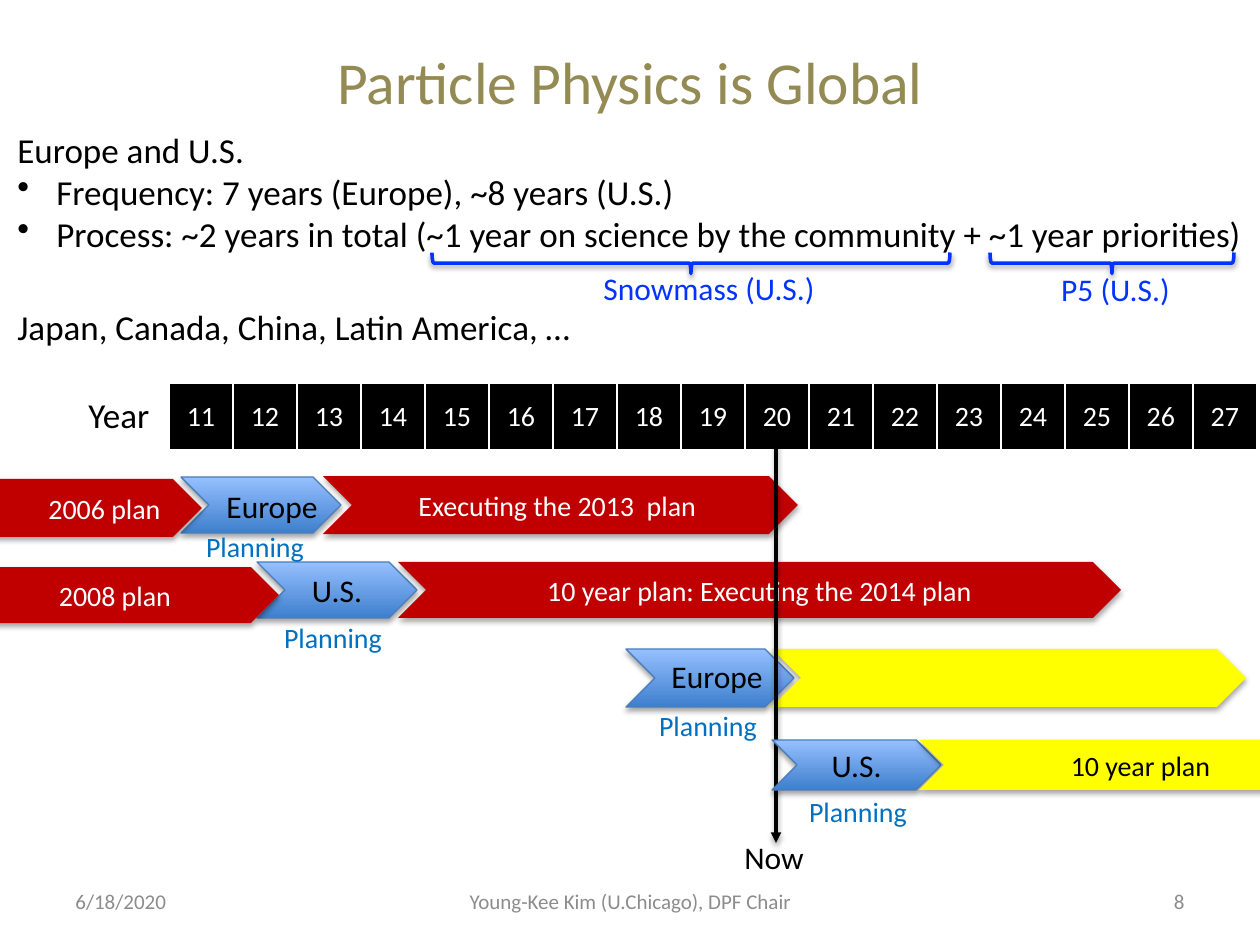
from lxml.etree import SubElement
from pptx import Presentation
from pptx.dml.color import RGBColor
from pptx.enum.shapes import MSO_CONNECTOR, MSO_SHAPE
from pptx.enum.text import MSO_ANCHOR, PP_ALIGN
from pptx.oxml.ns import qn
from pptx.util import Emu, Pt

LEFT, MID, RIGHT = PP_ALIGN.LEFT, PP_ALIGN.CENTER, PP_ALIGN.RIGHT
TOP, CORE = MSO_ANCHOR.TOP, MSO_ANCHOR.MIDDLE
CHEVRON, BRACE = MSO_SHAPE.CHEVRON, MSO_SHAPE.LEFT_BRACE


class Theme:
    font = "Calibri"
    black, white, gold = "000000", "FFFFFF", "948A54"
    red, yellow, gray = "C00000", "FFFF00", "8C8C8C"
    sky, ink, edge = "0070C0", "0432FF", "4A7DBA"
    blend = "3E7FCD", "96C0FF"
    title, body, name, small, foot = 34, 20, 18, 16, 12


def px(n):
    return Emu(round(n * 914400 / 126))


def rgb(code):
    return RGBColor.from_string(code)


def place(box, x, y, w, h):
    return [px(n) for n in (box[0] + x, box[1] + y, w, h)]


def style(para, size, color, align=LEFT):
    para.alignment = align
    para.font.name = Theme.font
    para.font.size = Pt(size)
    para.font.color.rgb = rgb(color)


def label(slide, spot, text, size, color, align=LEFT, anchor=TOP, wrap=False):
    frame = slide.shapes.add_textbox(*spot).text_frame
    frame.word_wrap = wrap
    frame.vertical_anchor = anchor
    frame.text = text
    for para in frame.paragraphs:
        style(para, size, color, align)
    return frame


def shade(shape):
    effects = SubElement(shape._element.spPr, qn("a:effectLst"))
    shadow = SubElement(effects, qn("a:outerShdw"), blurRad="39370", dist="22860",
                        dir="5400000", rotWithShape="0")
    color = SubElement(shadow, qn("a:srgbClr"), val=Theme.black)
    SubElement(color, qn("a:alpha"), val="35000")


def chevron(slide, spot, fill, text="", size=Theme.small, color=Theme.white, align=MID):
    shape = slide.shapes.add_shape(CHEVRON, *spot)
    if fill == Theme.blend:
        shape.fill.gradient()
        shape.fill.gradient_angle = 90
        for stop, code, at in zip(shape.fill.gradient_stops, fill, (0, 1)):
            stop.color.rgb = rgb(code)
            stop.position = at
        shape.line.color.rgb = rgb(Theme.edge)
        shape.line.width = Pt(0.75)
    else:
        shape.fill.solid()
        shape.fill.fore_color.rgb = rgb(fill)
        shape.line.fill.background()
    shade(shape)
    if text:
        frame = shape.text_frame
        frame.vertical_anchor = CORE
        frame.text = text
        style(frame.paragraphs[0], size, color, align)


def heading(slide, box):
    label(slide, place(box, 0, 0, *box[2:]), "Particle Physics is Global",
          Theme.title, Theme.gold, MID, CORE, True)


def notes(slide, box):
    lines = ["Europe and U.S.",
             "Frequency: 7 years (Europe), ~8 years (U.S.)",
             "Process: ~2 years in total (~1 year on science by the community + ~1 year priorities)",
             "Japan, Canada, China, Latin America, …"]
    frame = label(slide, place(box, 0, 0, *box[2:]), "\n".join(lines),
                  Theme.body, Theme.black)
    for para in frame.paragraphs[1:3]:
        props = para._p.get_or_add_pPr()
        props.set("marL", str(px(39)))
        props.set("indent", str(-px(39)))
        bullet = SubElement(props, qn("a:buChar"), char="•")
        props.insert(0, bullet)
    frame.paragraphs[3].space_before = Pt(29)
    for x, y, w, text in ((585, 141, 238, "Snowmass (U.S.)"), (1043, 142, 135, "P5 (U.S.)")):
        label(slide, place(box, x, y, w, 50), text, Theme.name, Theme.ink, MID)
    for x, span in ((427, 518), (985, 244)):
        deep = 21
        spot = place(box, x + (span - deep) / 2, 141 - span / 2, deep, span)
        brace = slide.shapes.add_shape(BRACE, *spot)
        brace.rotation = 270
        brace.fill.background()
        brace.line.color.rgb = rgb(Theme.ink)
        brace.line.width = Pt(2)
        shade(brace)


def years(slide, box):
    label(slide, place(box, -93, 4, 87, 55), "Year", Theme.body, Theme.black)
    span = range(11, 28)
    table = slide.shapes.add_table(1, len(span), *place(box, 0, 0, *box[2:])).table
    table.rows[0].height = px(box[3])
    for i, year in enumerate(span):
        table.columns[i].width = px(box[2] / len(span))
        cell = table.cell(0, i)
        cell.text = str(year)
        cell.vertical_anchor = CORE
        style(cell.text_frame.paragraphs[0], Theme.small, Theme.white, MID)
        cell.text_frame.paragraphs[0].font.bold = False
        props = cell._tc.get_or_add_tcPr()
        for side, wide in (("L", 1), ("R", 1), ("T", 1), ("B", 3)):
            line = SubElement(props, qn("a:ln" + side), w=str(Pt(wide)))
            fill = SubElement(line, qn("a:solidFill"))
            SubElement(fill, qn("a:srgbClr"), val=Theme.white)
        cell.fill.solid()
        cell.fill.fore_color.rgb = rgb(Theme.black)


def planning(slide, box, x, y):
    label(slide, place(box, x, y, 124, 47), "Planning", Theme.small, Theme.sky, MID)


def europe(slide, box, x, y):
    label(slide, place(box, x, y, 117, 50), "Europe", Theme.name, Theme.black)


def past(slide, box):
    chevron(slide, place(box, 257, 86, 160, 56), Theme.blend, "U.S.", Theme.name, Theme.black)
    chevron(slide, place(box, 181, 1, 160, 56), Theme.blend)
    chevron(slide, place(box, 398, 86, 723, 56), Theme.red,
            "10 year plan: Executing the 2014 plan")
    chevron(slide, place(box, 323, 0, 475, 58), Theme.red, "Executing the 2013  plan ")
    planning(slide, box, 193, 47)
    planning(slide, box, 271, 138)
    europe(slide, box, 214, 5)
    chevron(slide, place(box, -49, 3, 251, 58), Theme.red, "2006 plan", align=RIGHT)
    chevron(slide, place(box, -49, 91, 328, 56), Theme.red, "2008 plan")


def near(slide, box):
    chevron(slide, place(box, 0, 0, 168, 58), Theme.blend)
    chevron(slide, place(box, 146, 0, 474, 58), Theme.yellow)
    planning(slide, box, 20, 53)
    europe(slide, box, 33, 2)


def now(slide, box):
    x, y, w, h = box
    line = slide.shapes.add_connector(MSO_CONNECTOR.STRAIGHT,
                                      *[px(n) for n in (x, y, x + w, y + h)])
    line.line.color.rgb = rgb(Theme.black)
    line.line.width = Pt(2)
    SubElement(line._element.spPr.find(qn("a:ln")), qn("a:tailEnd"), type="triangle")
    shade(line)
    label(slide, place(box, -45, h - 11, 86, 50), "Now", Theme.name, Theme.black, MID)


def later(slide, box):
    chevron(slide, place(box, 0, 0, 169, 50), Theme.blend, "U.S.", Theme.name, Theme.black)
    chevron(slide, place(box, 147, 0, 443, 50), Theme.yellow, "10 year plan",
            color=Theme.black)
    planning(slide, box, 24, 48)


def footer(slide, box):
    for x, w, text, align in ((0, 294, "6/18/2020", LEFT),
                              (368, 399, "Young-Kee Kim (U.Chicago), DPF Chair", MID),
                              (840, 294, "8", RIGHT)):
        label(slide, place(box, x, 0, w, box[3]), text, Theme.foot, Theme.gray,
              align, CORE, True)


def main():
    deck = Presentation()
    deck.slide_width, deck.slide_height = px(1260), px(945)
    slide = deck.slides.add_slide(deck.slide_layouts[6])
    heading(slide, (0, 23, 1260, 115))
    past(slide, (0, 476, 1121, 147))
    near(slide, (626, 649, 620, 58))
    years(slide, (169, 383, 1088, 68))
    now(slide, (776, 441, 0, 402))
    later(slide, (772, 740, 590, 50))
    notes(slide, (5, 122, 1262, 233))
    footer(slide, (63, 876, 1134, 50))
    deck.save("out.pptx")


if __name__ == "__main__":
    main()
